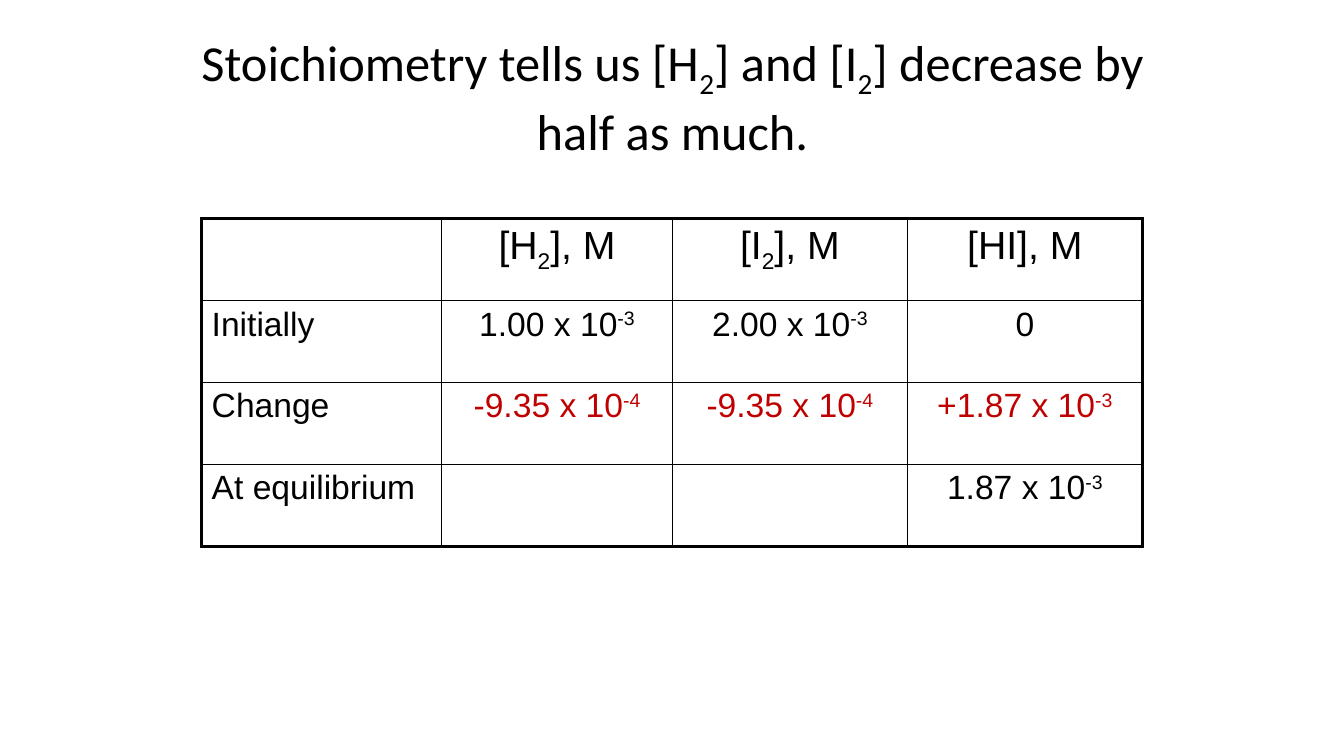
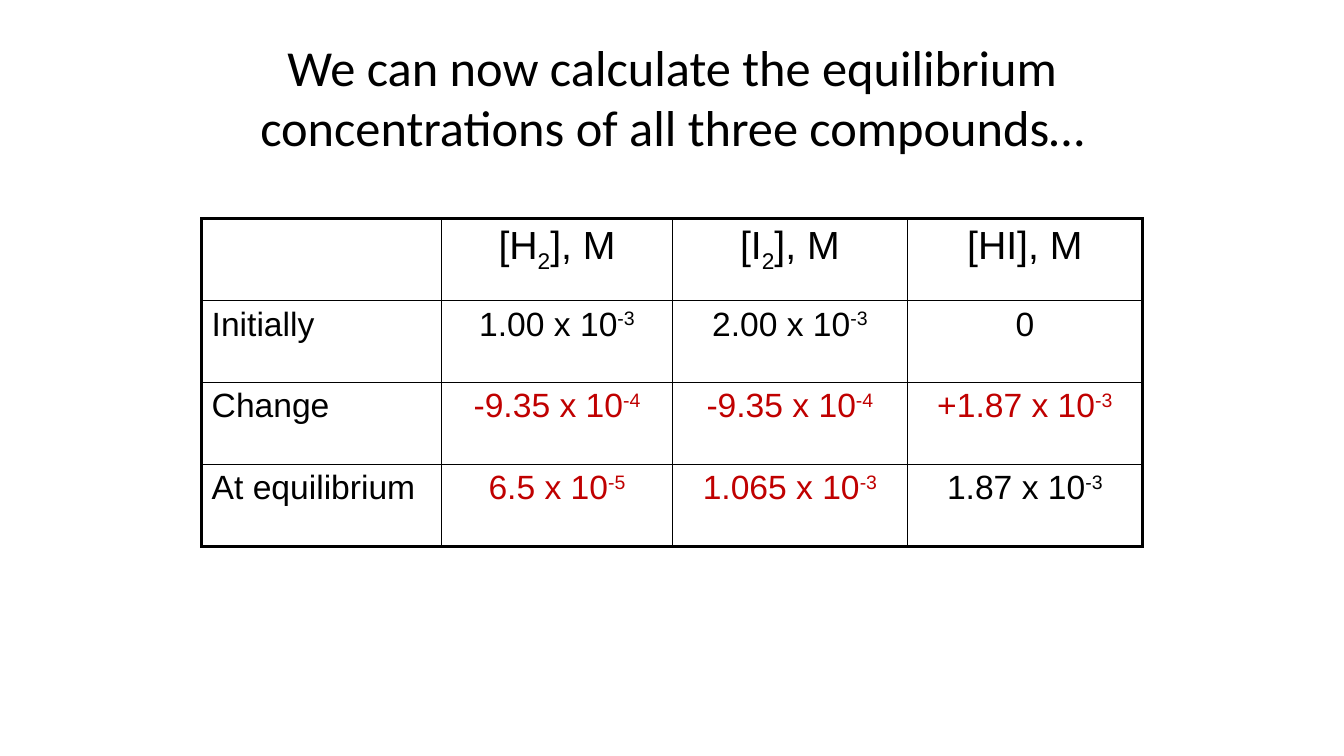
import dataclasses

import lxml.etree
import pptx
import pptx.dml.color
import pptx.enum.text
import pptx.oxml.ns
import pptx.util

Inches = pptx.util.Inches
Align = pptx.enum.text.PP_ALIGN

BLACK, RED = "000000", "C00000"
WIDTHS = (2.38, 2.29, 2.33, 2.33)
HEIGHT = 3.25
SHIFTS = {"_": "-25000", "^": "30000"}


@dataclasses.dataclass(frozen=True)
class Style:
    size: float
    font: str = "Arial"
    color: str = BLACK
    align: Align = Align.CENTER


TITLE = Style(36, "Calibri")
HEAD = Style(28)
LABEL = Style(24, align=Align.LEFT)
VALUE = Style(24)
NEW = Style(24, color=RED)


@dataclasses.dataclass(frozen=True)
class Entry:
    text: str = ""
    style: Style = VALUE


@dataclasses.dataclass(frozen=True)
class Page:
    title: str
    results: tuple[Entry, Entry]


ROWS = (
    (Entry(), Entry("[H|_2|], M", HEAD), Entry("[I|_2|], M", HEAD), Entry("[HI], M", HEAD)),
    (Entry("Initially", LABEL), Entry("1.00 x 10|^-3"), Entry("2.00 x 10|^-3"), Entry("0")),
    (Entry("Change", LABEL), Entry("-9.35 x 10|^-4", NEW), Entry("-9.35 x 10|^-4", NEW),
     Entry("+1.87 x 10|^-3", NEW)),
)
PAGES = (
    Page("Stoichiometry tells us [H|_2|] and [I|_2|] decrease by half as much.",
         (Entry(), Entry())),
    Page("We can now calculate the equilibrium concentrations of all three compounds…",
         (Entry("6.5 x 10|^-5", NEW), Entry("1.065 x 10|^-3", NEW))),
)


def paint(color: str) -> pptx.dml.color.RGBColor:
    return pptx.dml.color.RGBColor.from_string(color)


def write(frame, text: str, style: Style) -> None:
    """Split text at | into runs; a leading _ lowers a run and ^ raises it."""
    line = frame.paragraphs[0]
    line.alignment = style.align
    for part in filter(None, text.split("|")):
        run = line.add_run()
        run.text = part.lstrip("_^")
        run.font.size = pptx.util.Pt(style.size)
        run.font.name = style.font
        run.font.color.rgb = paint(style.color)
        if part[0] in SHIFTS:
            run.font._element.set("baseline", SHIFTS[part[0]])


def edge(cell, sides: dict[str, float]) -> None:
    """Draw the cell's borders, given in schema order L, R, T, B with widths in points."""
    props = cell._tc.get_or_add_tcPr()
    name = pptx.oxml.ns.qn
    for spot, (side, width) in enumerate(sides.items()):
        line = lxml.etree.Element(name(f"a:ln{side}"), w=str(pptx.util.Pt(width)))
        fill = lxml.etree.SubElement(line, name("a:solidFill"))
        lxml.etree.SubElement(fill, name("a:srgbClr"), val=BLACK)
        props.insert(spot, line)


def add_grid(slide, rows: tuple[tuple[Entry, ...], ...]) -> None:
    count, span = len(rows), len(WIDTHS)
    table = slide.shapes.add_table(count, span, Inches(2), Inches(2.17),
                                   Inches(sum(WIDTHS)), Inches(HEIGHT)).table
    table.first_row = table.horz_banding = False
    for col, width in zip(table.columns, WIDTHS):
        col.width = Inches(width)
    for y, row in enumerate(rows):
        table.rows[y].height = Inches(HEIGHT / count)
        for x, entry in enumerate(row):
            cell = table.cell(y, x)
            cell.fill.background()
            write(cell.text_frame, entry.text, entry.style)
            outer = {"L": x == 0, "R": x == span - 1, "T": y == 0, "B": y == count - 1}
            edge(cell, {side: 2.25 if out else 1 for side, out in outer.items()})


def add_title(slide, text: str) -> None:
    title = slide.shapes.title
    title.left, title.top = Inches(1.67), Inches(0.33)
    title.width, title.height = Inches(10), Inches(1.25)
    frame = title.text_frame
    frame.word_wrap = True
    frame.auto_size = pptx.enum.text.MSO_AUTO_SIZE.NONE
    frame.vertical_anchor = pptx.enum.text.MSO_ANCHOR.MIDDLE
    write(frame, text, TITLE)


def main() -> None:
    deck = pptx.Presentation()
    deck.slide_width, deck.slide_height = Inches(13.33), Inches(7.5)
    for page in PAGES:
        slide = deck.slides.add_slide(deck.slide_layouts[5])
        add_title(slide, page.title)
        last = (Entry("At equilibrium", LABEL), *page.results, Entry("1.87 x 10|^-3"))
        add_grid(slide, (*ROWS, last))
    deck.save("out.pptx")


if __name__ == "__main__":
    main()
